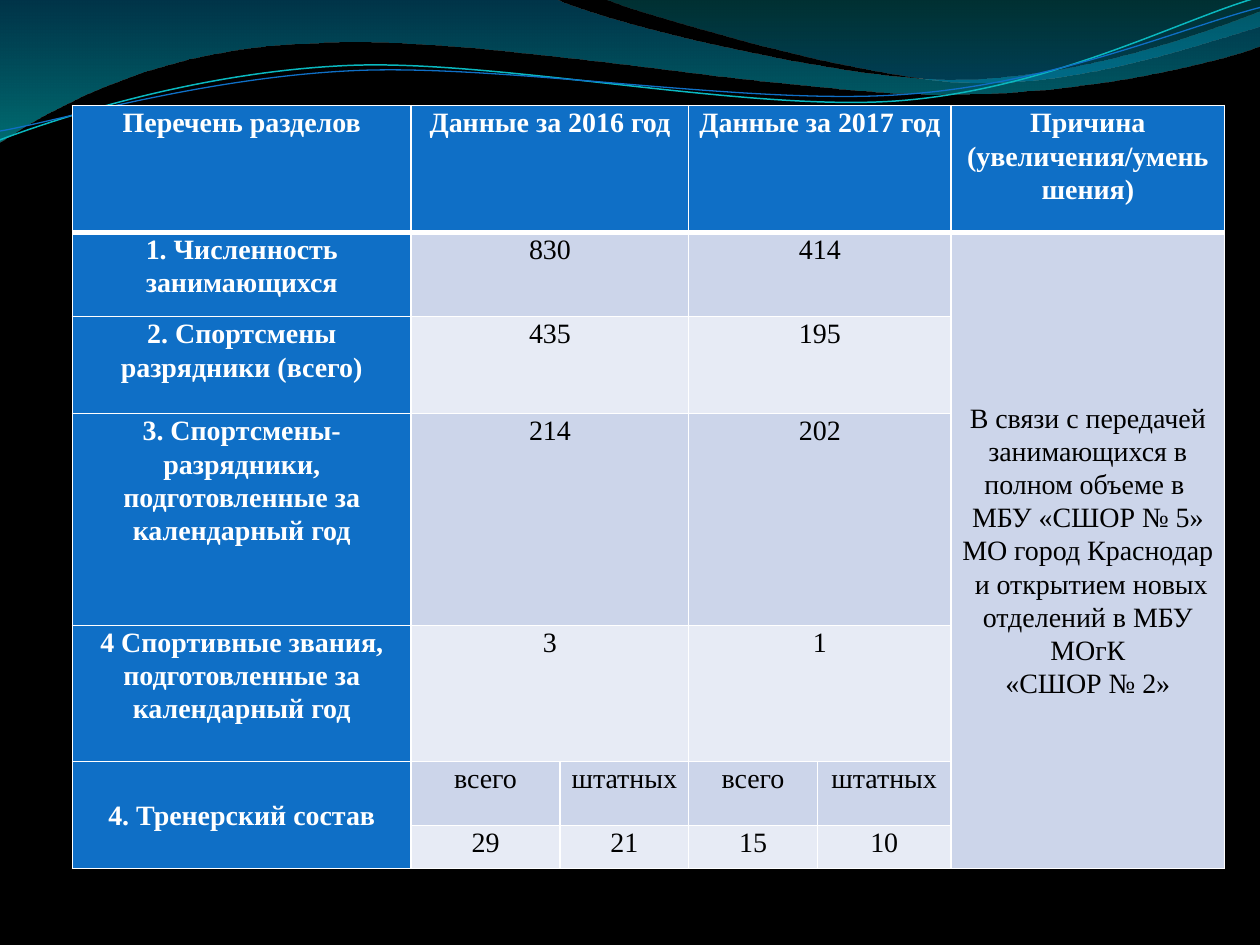
import math

from lxml import etree
from pptx import Presentation
from pptx.dml.color import RGBColor
from pptx.enum.text import MSO_ANCHOR, PP_ALIGN
from pptx.oxml.ns import qn
from pptx.util import Pt

CENTER = PP_ALIGN.CENTER
TOP, MIDDLE = MSO_ANCHOR.TOP, MSO_ANCHOR.MIDDLE

COLORS = {
    "background": "000000", "white": "FFFFFF", "text": "000000",
    "header": "0F6FC6", "dark_band": "CCD5EA", "light_band": "E7EBF5",
    "wave_blue": "0074A1", "wave_cyan": "00C6CF",
    "crest_teal": "00A1A9", "crest_blue": "008BBF",
    "cyan_line": "0AB8BF", "blue_line": "0F6FC6",
}
FONT = "Times New Roman"
LINE_TILT = 2.7

# Outlines: a start point, then two numbers for a line or six for a Bezier curve.
WAVE = [(0, 0), (316.8, -0.7),
        (342.7, 12.2, 478.1, 45.4, 545.8, 45.4),
        (614.2, 45.4, 689.8, 18.7, 720, 6.5), (720.7, 25.9),
        (707.8, 31.7, 626.4, 54.7, 537.1, 54),
        (447.8, 54, 275, 20.2, 185, 24.5),
        (92.9, 25.9, 33.1, 59.8, -0.7, 81.4), (0, 0)]
CREST = [(344.9, -0.7), (366.5, 7.9, 491, 44.6, 553.7, 46.8),
         (616.3, 49.7, 691.9, 23, 720, 15.1), (720, 0), (344.9, -0.7)]
CYAN_LINE = [(0, 79.9), (34.6, 67, 113.8, 41, 199.4, 37.4),
             (284.4, 33.8, 427, 64.1, 513.4, 57.6),
             (599.8, 51.1, 675.4, 10.8, 718.6, -1.4)]
BLUE_LINE = [(0, 74.9), (33.8, 69.1, 118.1, 43.9, 203.8, 40.3),
             (290.2, 36.7, 429.8, 60.5, 516.2, 54),
             (601.9, 48.2, 677.5, 15.1, 720, 4.3)]

TABLE_LEFT, TABLE_TOP = 41.3, 60.4
COLUMN_WIDTHS = [193.7, 85, 73.6, 73.6, 76.3, 156.4]
ROW_HEIGHTS = [72.4, 48.2, 55.4, 121, 77.8, 36.7, 24.5]
# A vertical bar marks a line break, a newline starts a paragraph.
ROWS = [
    ["Перечень разделов", "Данные за 2016 год", "", "Данные за 2017 год", "",
     "Причина (увеличения/уменьшения)"],
    ["1. Численность занимающихся", "830", "", "414", "",
     "В связи с передачей занимающихся в полном объеме в |МБУ «СШОР № 5» "
     "МО город Краснодар| и открытием новых отделений в МБУ МОгК\n«СШОР № 2»"],
    ["2. Спортсмены разрядники (всего)", "435", "", "195", "", ""],
    ["3. Спортсмены-разрядники, подготовленные за календарный год",
     "214", "", "202", "", ""],
    ["4 Спортивные звания, подготовленные за календарный год",
     "3", "", "1", "", ""],
    ["4. Тренерский состав", "всего", "штатных", "всего", "штатных", ""],
    ["", "29", "21", "15", "10", ""],
]
REASON_COLUMN = 5
COACH_ROW = 5


def rgb(name):
    return RGBColor.from_string(COLORS[name])


def tilt(outline, center, degrees):
    """Turn every point of an outline clockwise about the center."""
    cos, sin = math.cos(math.radians(degrees)), math.sin(math.radians(degrees))
    cx, cy = center
    turned = []
    for segment in outline:
        numbers = []
        for x, y in zip(segment[::2], segment[1::2]):
            numbers += [cx + (x - cx) * cos - (y - cy) * sin,
                        cy + (x - cx) * sin + (y - cy) * cos]
        turned.append(tuple(numbers))
    return turned


def add_outline(slide, outline, close):
    """Build a freeform, then join each three points of a curve into one Bezier."""
    points = [(Pt(x), Pt(y)) for segment in outline
              for x, y in zip(segment[::2], segment[1::2])]
    builder = slide.shapes.build_freeform(*points[0], scale=1.0)
    builder.add_line_segments(points[1:], close=close)
    shape = builder.convert_to_shape()
    shape.shadow.inherit = False
    lines = shape.element.iter(qn("a:lnTo"))
    lines = iter(list(lines))
    for segment in outline[1:]:
        first = next(lines)
        if len(segment) == 6:
            first.tag = qn("a:cubicBezTo")
            for line in (next(lines), next(lines)):
                first.append(line[0])
                line.getparent().remove(line)
    return shape


def add_gradient_wave(slide, outline, stops):
    """Add a borderless wave; stops are (colour, opacity in percent), top first."""
    shape = add_outline(slide, outline, True)
    shape.line.fill.background()
    shape.fill.gradient()
    shape.fill.gradient_angle = 270
    for stop, (color, _) in zip(shape.fill.gradient_stops, stops):
        stop.color.rgb = rgb(color)
    for node, (_, opacity) in zip(shape.element.iter(qn("a:srgbClr")), stops):
        etree.SubElement(node, qn("a:alpha"), val=str(opacity * 1000))


def add_curved_line(slide, outline, center, color, width):
    """Add an open curve whose frame is tilted counter-clockwise."""
    shape = add_outline(slide, tilt(outline, center, LINE_TILT), False)
    shape.rotation = 360 - LINE_TILT
    shape.fill.background()
    shape.line.color.rgb = rgb(color)
    shape.line.width = Pt(width)


def set_borders(cell, widths):
    """Draw white borders; widths are left, right, top, bottom."""
    properties = cell._tc.get_or_add_tcPr()
    for index, (side, width) in enumerate(zip("LRTB", widths)):
        line = etree.Element(qn(f"a:ln{side}"), w=str(Pt(width)))
        fill = etree.SubElement(line, qn("a:solidFill"))
        etree.SubElement(fill, qn("a:srgbClr"), val=COLORS["white"])
        properties.insert(index, line)


def write_cell(cell, text, color, bold, anchor):
    cell.margin_left = cell.margin_right = Pt(5)
    cell.margin_top = cell.margin_bottom = 0
    cell.vertical_anchor = anchor
    frame = cell.text_frame
    for index, paragraph_text in enumerate(text.split("\n")):
        para = frame.add_paragraph() if index else frame.paragraphs[0]
        para.alignment = CENTER
        para.line_spacing = 1.07
        para.font.size = Pt(16)
        for part, words in enumerate(paragraph_text.split("|")):
            if part:
                para.add_line_break()
            if words:
                span = para.add_run()
                span.text = words
                span.font.name = FONT
                span.font.size = Pt(16)
                span.font.bold = bold
                span.font.color.rgb = rgb(color)


def add_comparison_table(slide):
    frame = slide.shapes.add_table(len(ROWS), len(COLUMN_WIDTHS),
                                   Pt(TABLE_LEFT), Pt(TABLE_TOP),
                                   Pt(sum(COLUMN_WIDTHS)), Pt(sum(ROW_HEIGHTS)))
    table = frame.table
    table.horz_banding = False
    for column, width in zip(table.columns, COLUMN_WIDTHS):
        column.width = Pt(width)
    for row, height in zip(table.rows, ROW_HEIGHTS):
        row.height = Pt(height)

    for r, texts in enumerate(ROWS):
        for c, text in enumerate(texts):
            cell = table.cell(r, c)
            heading = r == 0 or c == 0
            reason = r > 0 and c == REASON_COLUMN
            if heading:
                fill = "header"
            else:
                fill = "dark_band" if reason or r % 2 else "light_band"
            centered = reason or (r >= COACH_ROW and c == 0)
            write_cell(cell, text, "white" if heading else "text", heading,
                       MIDDLE if centered else TOP)
            cell.fill.solid()
            cell.fill.fore_color.rgb = rgb(fill)
            set_borders(cell, (1, 1, 3 if r == 1 else 1, 3 if r == 0 else 1))

    for r in range(COACH_ROW):
        for c in (1, 3):
            table.cell(r, c).merge(table.cell(r, c + 1))
    last_row = len(ROWS) - 1
    table.cell(1, REASON_COLUMN).merge(table.cell(last_row, REASON_COLUMN))
    table.cell(COACH_ROW, 0).merge(table.cell(last_row, 0))


def main():
    deck = Presentation()
    deck.slide_width, deck.slide_height = Pt(720), Pt(540)
    slide = deck.slides.add_slide(deck.slide_layouts[6])
    slide.background.fill.solid()
    slide.background.fill.fore_color.rgb = rgb("background")
    add_gradient_wave(slide, WAVE, [("wave_blue", 45), ("wave_cyan", 55)])
    add_gradient_wave(slide, CREST, [("crest_teal", 30), ("crest_blue", 45)])
    add_curved_line(slide, CYAN_LINE, (359.3, 41.4), "cyan_line", 0.85)
    add_curved_line(slide, BLUE_LINE, (359.6, 42.5), "blue_line", 0.75)
    add_comparison_table(slide)
    deck.save("out.pptx")


if __name__ == "__main__":
    main()
